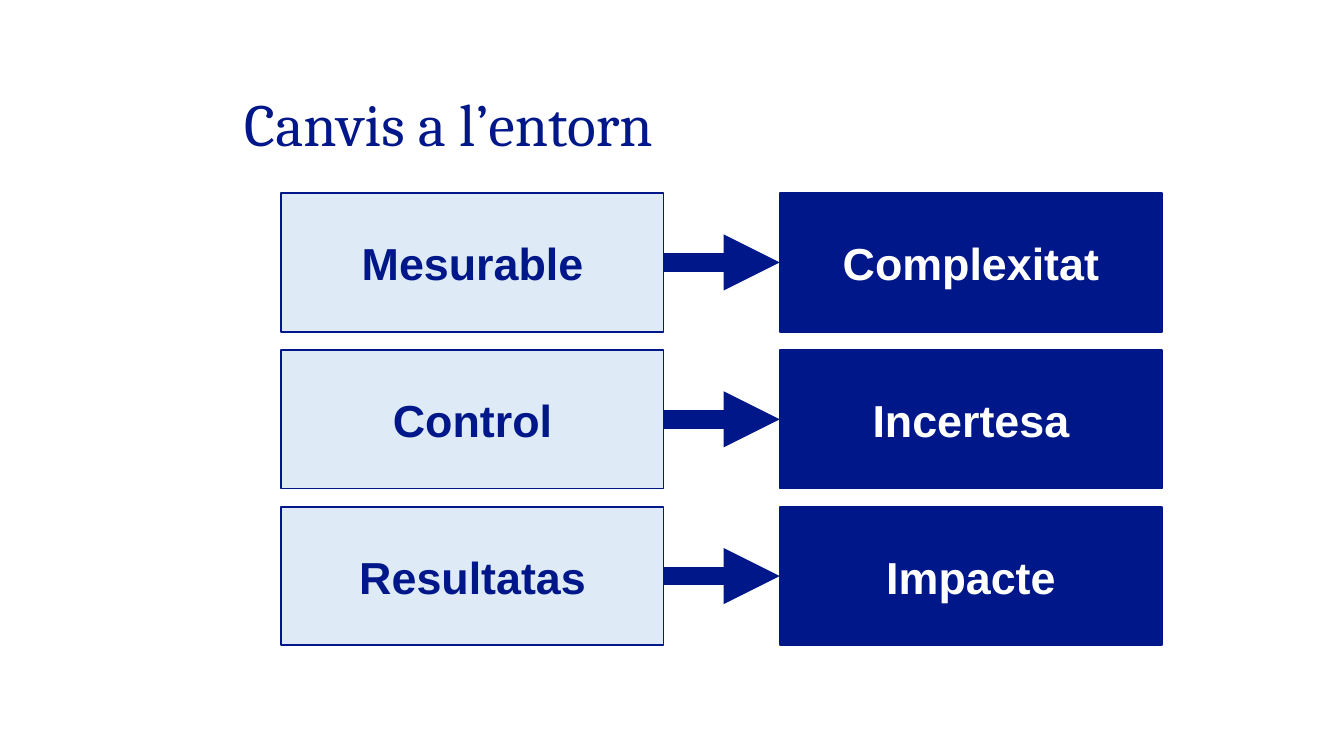
import pptx
import pptx.util
import pptx.dml.color
import pptx.enum.shapes
import pptx.enum.text
import pptx.oxml.ns
from lxml import etree
from dataclasses import dataclass

PX = 9525  # EMU per px, slide is 960 x 540 px


@dataclass
class Theme:
    navy = pptx.dml.color.RGBColor.from_string("001789")
    pale = pptx.dml.color.RGBColor.from_string("DEEBF7")
    white = pptx.dml.color.RGBColor.from_string("FFFFFF")
    title_font, title_size = "Cambria", pptx.util.Pt(32)
    box_font, box_size = "Arial", pptx.util.Pt(24)
    border, arrow = pptx.util.Pt(1), pptx.util.Pt(10)


def add_box(s, left, top, label, fill, color):
    sp = s.shapes.add_shape(pptx.enum.shapes.MSO_SHAPE.RECTANGLE,
                            left * PX, top * PX, BOX_W * PX, BOX_H * PX)
    sp.shadow.inherit = False
    sp.fill.solid()
    sp.fill.fore_color.rgb = fill
    sp.line.color.rgb = Theme.navy
    sp.line.width = Theme.border
    tf = sp.text_frame
    tf.text = label
    tf.vertical_anchor = pptx.enum.text.MSO_ANCHOR.MIDDLE
    p = tf.paragraphs[0]
    p.alignment = pptx.enum.text.PP_ALIGN.CENTER
    r = p.runs[0]
    r.font.name, r.font.size, r.font.bold = Theme.box_font, Theme.box_size, True
    r.font.color.rgb = color
    return sp


prs = pptx.Presentation()
prs.slide_width, prs.slide_height = 960 * PX, 540 * PX
s = prs.slides.add_slide(prs.slide_layouts[6])

# Title
tb = s.shapes.add_textbox(165 * PX, 27 * PX, 766 * PX, 92 * PX)
tf = tb.text_frame
tf.word_wrap = True
tf.vertical_anchor = pptx.enum.text.MSO_ANCHOR.BOTTOM
tf.text = "Canvis a l’entorn"
p = tf.paragraphs[0]
p.line_spacing = 0.9
r = p.runs[0]
r.font.name, r.font.size = Theme.title_font, Theme.title_size
r.font.color.rgb = Theme.navy

# Rows: before -> after
BOX_W, BOX_H = 273, 99
BEFORE_X, AFTER_X = 201, 557
TOP, PITCH = 138, 112
changes = [("Mesurable", "Complexitat"),
           ("Control", "Incertesa"),
           ("Resultatas", "Impacte")]

for row, (before, after) in enumerate(changes):
    top = TOP + row * PITCH
    source = add_box(s, BEFORE_X, top, before, Theme.pale, Theme.navy)
    target = add_box(s, AFTER_X, top, after, Theme.navy, Theme.white)

    # Arrow between the two boxes
    cx = s.shapes.add_connector(pptx.enum.shapes.MSO_CONNECTOR.STRAIGHT, 0, 0, 0, 0)
    cx.begin_connect(source, 3)
    cx.end_connect(target, 1)
    cx.line.color.rgb = Theme.navy
    cx.line.width = Theme.arrow
    ln = cx.line._get_or_add_ln()
    etree.SubElement(ln, pptx.oxml.ns.qn("a:tailEnd"), type="triangle")
    etree.SubElement(cx._element.spPr, pptx.oxml.ns.qn("a:effectLst"))

prs.save("out.pptx")
